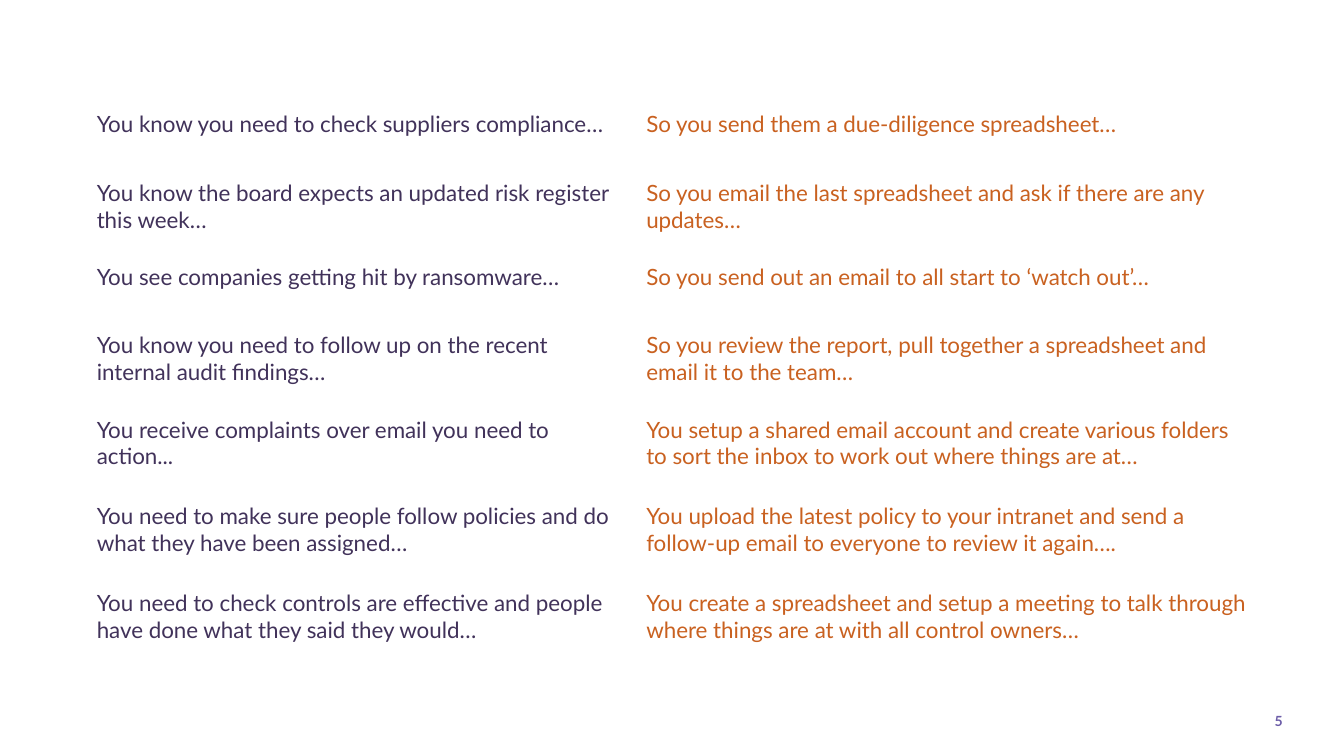
from dataclasses import dataclass

from pptx import Presentation
from pptx.dml.color import RGBColor
from pptx.enum.text import PP_ALIGN
from pptx.util import Inches, Pt

RIGHT = PP_ALIGN.RIGHT
BLANK_LAYOUT = 6


@dataclass(frozen=True)
class Theme:
    font: str = "Lato"
    need: RGBColor = RGBColor(0x41, 0x32, 0x5A)
    response: RGBColor = RGBColor(0xC9, 0x61, 0x20)
    page_number: RGBColor = RGBColor(0x6C, 0x5D, 0xA8)
    body_size: int = 16
    number_size: int = 10


THEME = Theme()
COLUMN_WIDTHS = (5.45, 6.25)
ROW_HEIGHTS = [0.68] * 4 + [0.86] * 3
CELL_INSET = 0.15

NEEDS_AND_RESPONSES = [
    ("You know you need to check suppliers compliance…",
     "So you send them a due-diligence spreadsheet…"),
    ("You know the board expects an updated risk register this week…",
     "So you email the last spreadsheet and ask if there are any updates…"),
    ("You see companies getting hit by ransomware…",
     "So you send out an email to all start to ‘watch out’…"),
    ("You know you need to follow up on the recent internal audit findings…",
     "So you review the report, pull together a spreadsheet and email it to the team…"),
    ("You receive complaints over email you need to action...",
     "You setup a shared email account and create various folders to sort the inbox "
     "to work out where things are at…"),
    ("You need to make sure people follow policies and do what they have been assigned…",
     "You upload the latest policy to your intranet and send a follow-up email to "
     "everyone to review it again…."),
    ("You need to check controls are effective and people have done what they said they would…",
     "You create a spreadsheet and setup a meeting to talk through where things are at "
     "with all control owners…"),
]


def write(frame, text, size, color, bold=False):
    para = frame.paragraphs[0]
    para.text = text
    para.font.name = THEME.font
    para.font.size = Pt(size)
    para.font.bold = bold
    para.font.color.rgb = color
    return para


def fill_cell(cell, text, color):
    cell.fill.background()
    cell.margin_left = cell.margin_right = Inches(CELL_INSET)
    cell.margin_top = cell.margin_bottom = Inches(CELL_INSET)
    write(cell.text_frame, text, THEME.body_size, color)


def add_needs_table(page):
    frame = page.shapes.add_table(
        len(ROW_HEIGHTS), len(COLUMN_WIDTHS), Inches(0.81), Inches(0.95),
        Inches(sum(COLUMN_WIDTHS)), Inches(sum(ROW_HEIGHTS)))
    table = frame.table
    table.first_row = False
    table.horz_banding = False
    for column, width in zip(table.columns, COLUMN_WIDTHS):
        column.width = Inches(width)
    for row, height, texts in zip(table.rows, ROW_HEIGHTS, NEEDS_AND_RESPONSES):
        row.height = Inches(height)
        for cell, text, color in zip(row.cells, texts, (THEME.need, THEME.response)):
            fill_cell(cell, text, color)


def add_page_number(page, number):
    box = page.shapes.add_textbox(Inches(11.74), Inches(7.02), Inches(1.08), Inches(0.27))
    box.text_frame.word_wrap = True
    para = write(box.text_frame, number, THEME.number_size, THEME.page_number, bold=True)
    para.alignment = RIGHT


def main():
    deck = Presentation()
    deck.slide_width = Inches(13.33)
    deck.slide_height = Inches(7.5)
    page = deck.slides.add_slide(deck.slide_layouts[BLANK_LAYOUT])
    add_page_number(page, "5")
    add_needs_table(page)
    deck.save("out.pptx")


if __name__ == "__main__":
    main()
